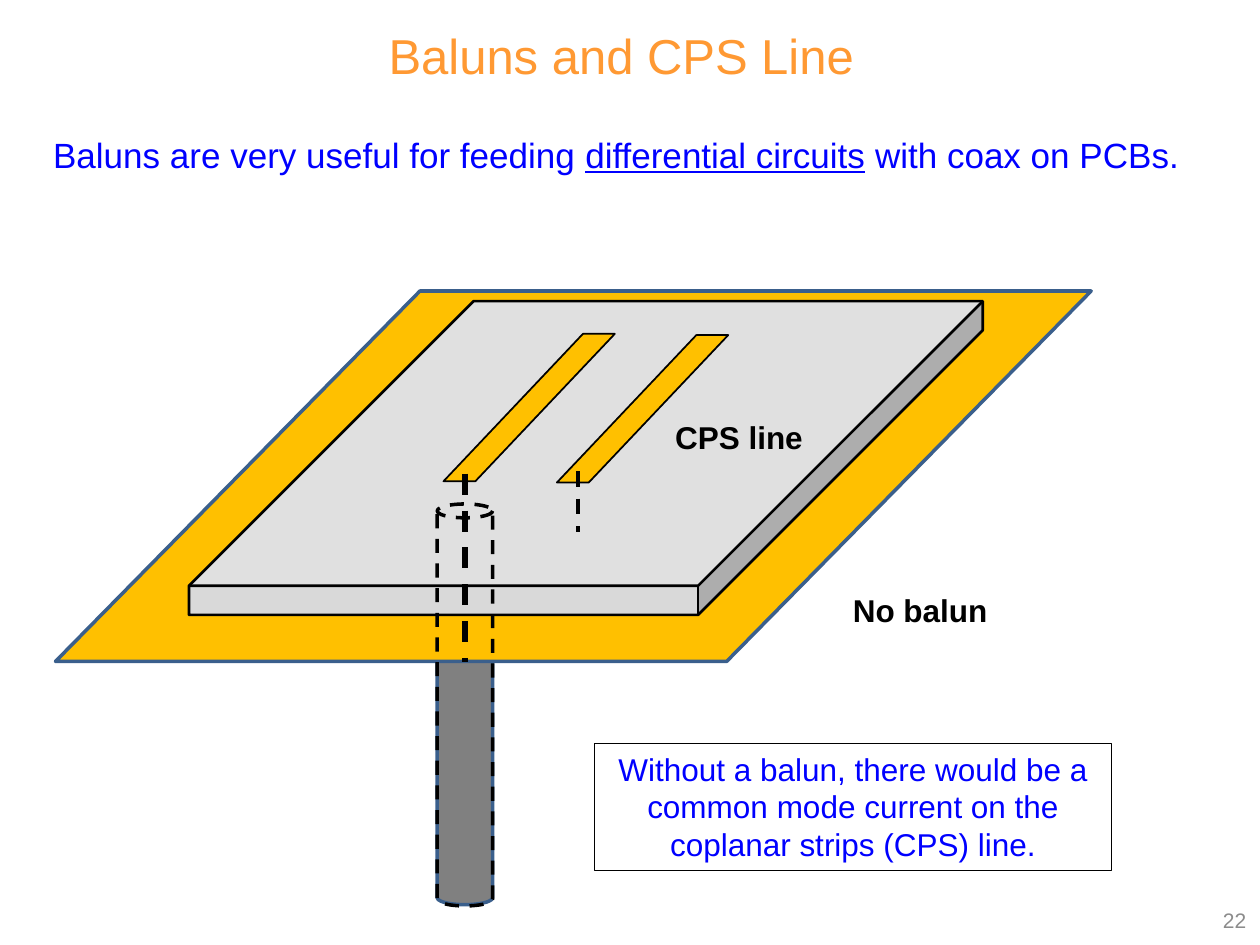
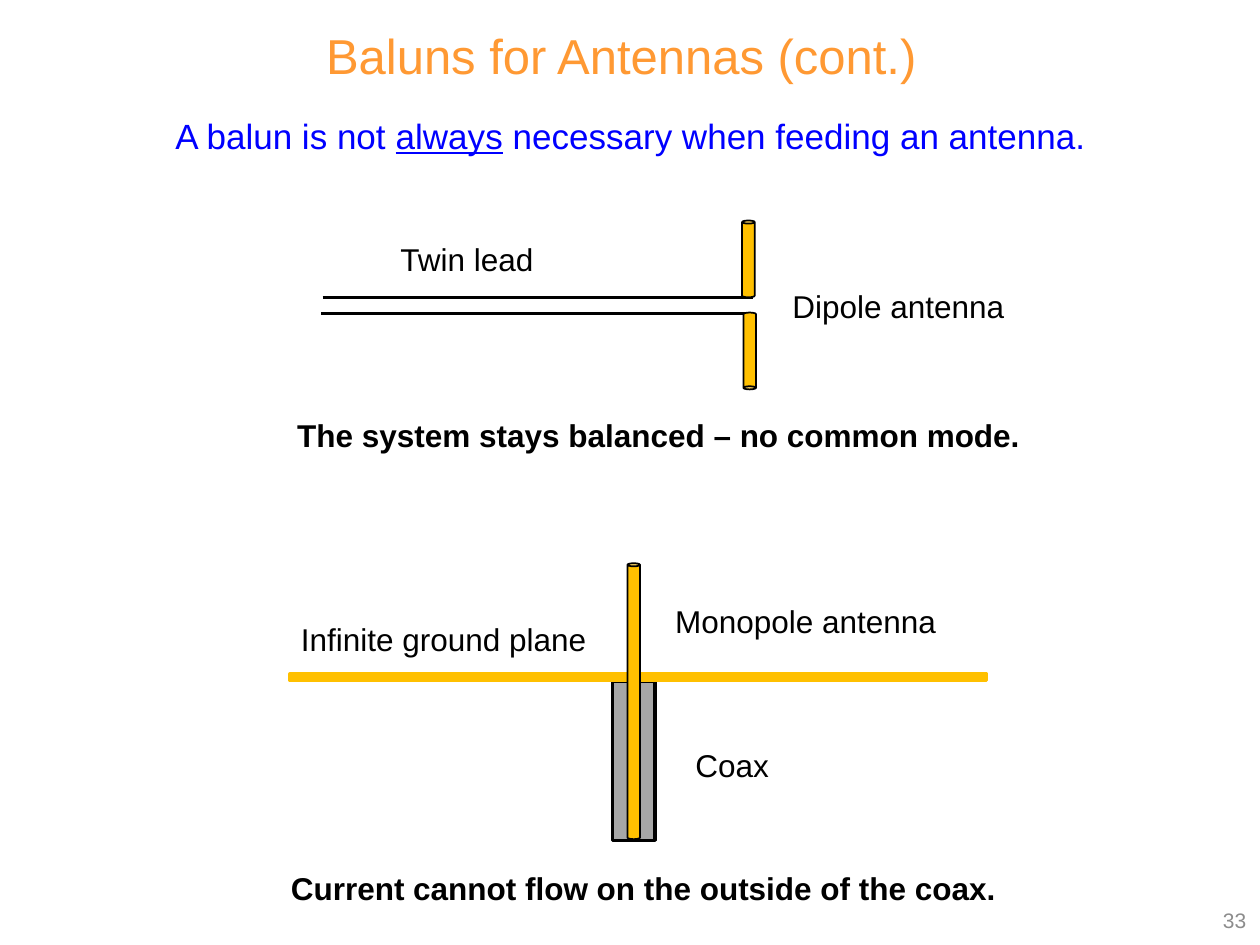
from lxml import etree
from pptx import Presentation
from pptx.dml.color import RGBColor
from pptx.enum import dml, shapes as es, text as et
from pptx.oxml import ns
from pptx.util import Inches, Pt

HUES = {
    "title": "FF9933",
    "lead": "0000FF",
    "ink": "000000",
    "page": "8C8C8C",
    "gold": "FFC000",
    "steel": "3A5F8C",
    "board": "D9D9D9",
    "cable": "808080",
    "coax": "A6A6A6",
}
FONT = "Arial"
KIND = es.MSO_SHAPE
ALIGN = et.PP_ALIGN


def hue(name):
    return RGBColor.from_string(HUES[name])


def style(frame, size, tint, bold=False, align=ALIGN.LEFT):
    for para in frame.paragraphs:
        para.alignment = align
        for run in para.runs:
            font = run.font
            font.name, font.size, font.bold = FONT, Pt(size), bold
            font.color.rgb = hue(tint)


def stroke(line, tint, width, dash=False):
    line.color.rgb = hue(tint)
    line.width = Pt(width)
    if dash:
        line.dash_style = dml.MSO_LINE.DASH


def solid(parts, kind, box, fill=None, edge="ink", width=1, ratio=None, dash=False):
    """Add a preset shape; without a fill name it is see-through."""
    item = parts.add_shape(kind, *map(Inches, box))
    item.shadow.inherit = False
    if ratio is not None:
        item.adjustments[0] = ratio
    if fill:
        item.fill.solid()
        item.fill.fore_color.rgb = hue(fill)
    else:
        item.fill.background()
    stroke(item.line, edge, width, dash)
    return item


def wire(parts, start, end, width, dash=False):
    item = parts.add_connector(
        es.MSO_CONNECTOR.STRAIGHT, *map(Inches, (*start, *end)))
    stroke(item.line, "ink", width, dash)
    etree.SubElement(item._element.spPr, ns.qn("a:effectLst"))


def label(parts, words, box, bold=False):
    item = parts.add_textbox(*map(Inches, box))
    frame = item.text_frame
    frame.text = words
    frame.word_wrap = False
    frame.auto_size = et.MSO_AUTO_SIZE.SHAPE_TO_FIT_TEXT
    style(frame, 18, "ink", bold)


def lead(slide, words, box):
    """Add the blue line; words are (before, underlined, after)."""
    frame = slide.shapes.add_textbox(*map(Inches, box)).text_frame
    frame.word_wrap = True
    for i, part in enumerate(words):
        run = frame.paragraphs[0].add_run()
        run.text = part
        run.font.underline = i == 1
    style(frame, 20, "lead", align=ALIGN.CENTER)


def start(deck, title, number):
    """Add a slide with its title and page number."""
    slide = deck.slides.add_slide(deck.slide_layouts[5])
    head = slide.shapes.title
    head.left, head.top, head.width, head.height = map(Inches, (0.35, 0.15, 9.16, 0.57))
    head.text_frame.text = title
    head.text_frame.vertical_anchor = et.MSO_ANCHOR.TOP
    style(head.text_frame, 28, "title", align=ALIGN.CENTER)
    page = slide.shapes.add_textbox(*map(Inches, (7.66, 7.1, 2.33, 0.4))).text_frame
    page.text = number
    page.word_wrap = True
    page.vertical_anchor = et.MSO_ANCHOR.MIDDLE
    style(page, 12, "page", align=ALIGN.RIGHT)
    return slide


def board(slide, x, y):
    """Draw the circuit board with its coax feed."""
    parts = slide.shapes.add_group_shape().shapes
    feed, bore = x + 3.03, 0.44
    mid = feed + bore / 2
    solid(parts, KIND.CAN, (feed, y + 1.83, bore, 3.04), "cable", "steel", 2)
    solid(parts, KIND.PARALLELOGRAM, (x, y, 8.22, 2.94), "gold", "steel", 2, 0.984)
    solid(parts, KIND.CUBE, (x + 1.06, y + 0.08, 6.3, 2.49), "board", width=1.5, ratio=0.907)
    for i in range(2):
        strip = (x + 3.08 + 0.9 * i, y + 0.34 + 0.01 * i, 1.36, 1.17)
        solid(parts, KIND.PARALLELOGRAM, strip, "gold", ratio=0.946)
    solid(parts, KIND.CAN, (feed, y + 1.69, bore, 3.19), width=2, dash=True)
    wire(parts, (mid, y + 1.45), (mid, y + 2.94), 3, True)
    wire(parts, (mid + 0.9, y + 1.43), (mid + 0.9, y + 1.91), 2.25, True)


def note(slide, words, box):
    item = solid(slide.shapes, KIND.RECTANGLE, box, width=0.75)
    frame = item.text_frame
    frame.text = words
    frame.word_wrap = True
    frame.vertical_anchor = et.MSO_ANCHOR.TOP
    style(frame, 18, "lead", align=ALIGN.CENTER)


def dipole(slide, x, y):
    """Draw the twin lead and the two arms it feeds."""
    parts = slide.shapes.add_group_shape().shapes
    arm = 0.61
    for left, top in ((x, y + 0.74), (x + 0.01, y + arm)):
        wire(parts, (left, top), (left + 3.42, top), 1.5)
    solid(parts, KIND.CAN, (x + 3.34, y, 0.1, arm), "gold")
    lower = solid(parts, KIND.CAN, (x + 3.35, y + 0.73, 0.1, arm), "gold")
    lower.rotation = 180
    label(parts, "Dipole antenna", (x + 3.64, y + 0.48, 1.9, 0.4))
    label(parts, "Twin lead", (x + 0.53, y + 0.11, 1.27, 0.4))


def monopole(slide, x, y):
    """Draw the rod through the ground plane, fed by coax."""
    parts = slide.shapes.add_group_shape().shapes
    solid(parts, KIND.RECTANGLE, (x + 2.56, y + 0.94, 0.34, 1.26), "coax", width=2)
    solid(parts, KIND.RECTANGLE, (x, y + 0.88, 5.53, 0.05), "gold", "gold", 2)
    solid(parts, KIND.CAN, (x + 2.68, y, 0.1, 2.19), "gold")
    label(parts, "Monopole antenna", (x + 2.96, y + 0.26, 2.29, 0.4))
    label(parts, "Coax", (x + 3.12, y + 1.4, 0.79, 0.4))
    label(parts, "Infinite ground plane", (x - 0.01, y + 0.4, 2.49, 0.4))


def strips(deck):
    slide = start(deck, "Baluns and CPS Line", "22")
    lead(slide, ("Baluns are very useful for feeding ", "differential circuits",
                 " with coax on PCBs."), (0.29, 1.01, 9.2, 0.44))
    board(slide, 0.44, 2.31)
    label(slide.shapes, "No balun", (6.67, 4.64, 1.28, 0.4), True)
    note(slide, "Without a balun, there would be a common mode current "
                "on the coplanar strips (CPS) line.", (4.72, 5.9, 4.1, 1.01))
    label(slide.shapes, "CPS line", (5.26, 3.27, 1.23, 0.4), True)


def aerials(deck):
    slide = start(deck, "Baluns for Antennas (cont.)", "33")
    lead(slide, ("A balun is not ", "always", " necessary when feeding an antenna."),
         (0.76, 0.86, 8.49, 0.44))
    dipole(slide, 2.55, 1.75)
    label(slide.shapes, "The system stays balanced – no common mode.",
          (2.26, 3.25, 5.99, 0.4), True)
    monopole(slide, 2.3, 4.47)
    label(slide.shapes, "Current cannot flow on the outside of the coax.",
          (2.21, 6.85, 5.99, 0.4), True)


def main():
    deck = Presentation()
    deck.slide_width, deck.slide_height = Inches(10), Inches(7.5)
    strips(deck)
    aerials(deck)
    deck.save("out.pptx")


if __name__ == "__main__":
    main()
